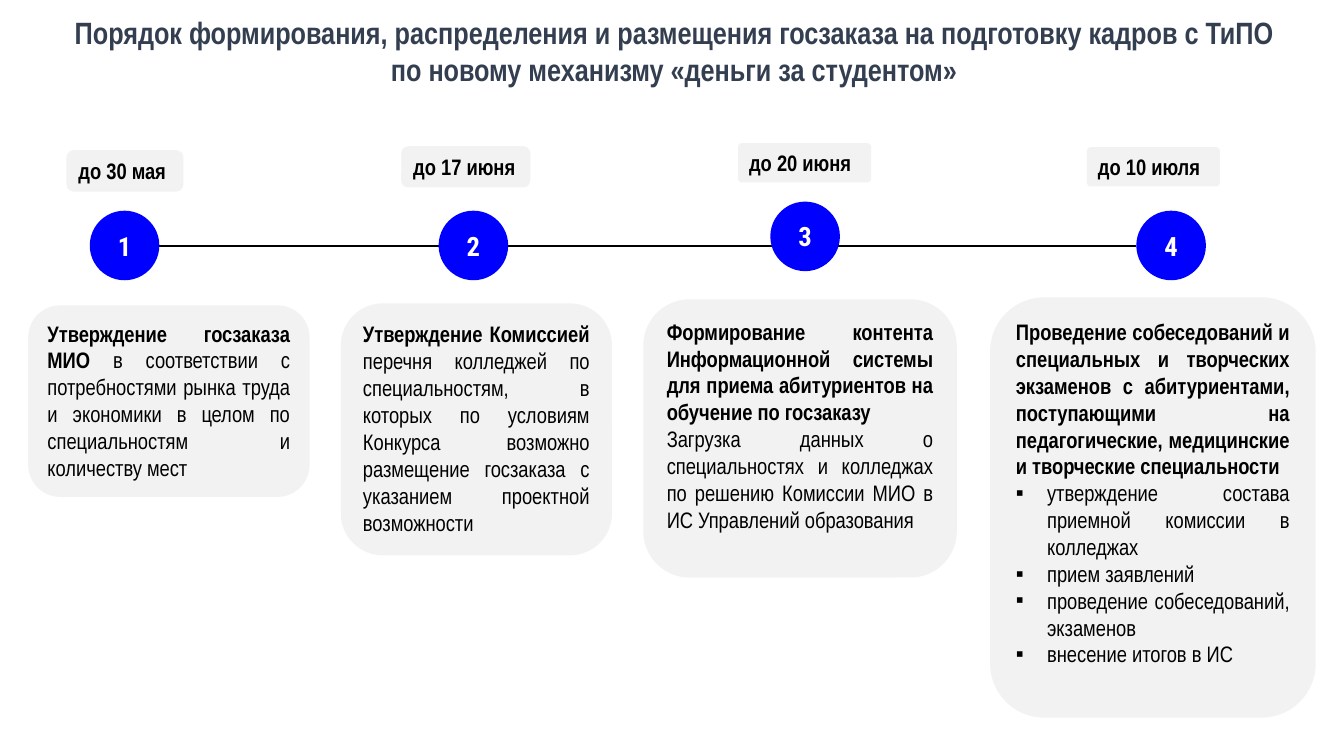
from lxml import etree
from pptx import Presentation
from pptx import util as u
from pptx.dml.color import RGBColor
from pptx.enum import shapes, text
from pptx.oxml import ns

NAVY = RGBColor(0x33, 0x3F, 0x50)
GRAY = RGBColor(0xF2, 0xF2, 0xF2)
BLUE = RGBColor(0x00, 0x00, 0xFF)
BLACK = RGBColor(0x00, 0x00, 0x00)
WHITE = RGBColor(0xFF, 0xFF, 0xFF)

NARROW = "Arial Narrow"
LEFT, CENTER, JUSTIFY = (text.PP_ALIGN.LEFT, text.PP_ALIGN.CENTER,
                         text.PP_ALIGN.JUSTIFY)
TOP, MIDDLE = text.MSO_ANCHOR.TOP, text.MSO_ANCHOR.MIDDLE
ROUNDED, OVAL = (shapes.MSO_SHAPE.ROUNDED_RECTANGLE, shapes.MSO_SHAPE.OVAL)

TITLE_FORMAT = {"size": u.Pt(22), "name": NARROW, "bold": True}
BODY_FORMAT = {"size": u.Pt(16), "name": NARROW}
NUMBER_FORMAT = {"size": u.Pt(19), "name": "Roboto Condensed", "bold": True}

CIRCLE_SIZE = 0.69
LINE_Y = 2.44

TITLE = [
    "Порядок формирования, распределения и размещения госзаказа на подготовку кадров с ТиПО",
    "по новому механизму «деньги за студентом»",
]

# Each stage: date label, label place and corner, circle place, card place,
# card paragraphs as (bold part, regular part), bullets
STAGES = [
    ("до 30 мая", (0.66, 1.49, 1.16, 0.41), 0.17, (0.89, 2.09),
     (0.28, 3.03, 2.79, 1.9),
     [("Утверждение госзаказа МИО ",
       "в соответствии с потребностями рынка труда и экономики в целом "
       "по специальностям и количеству мест")], []),
    ("до 17 июня", (3.98, 1.45, 1.28, 0.41), 0.17, (4.35, 2.09),
     (3.38, 3.01, 2.69, 2.5),
     [("Утверждение Комиссией ",
       "перечня колледжей по специальностям, в которых по условиям Конкурса "
       "возможно размещение госзаказа с указанием проектной возможности")], []),
    ("до 20 июня", (7.32, 1.42, 1.32, 0.39), 0.1, (7.64, 2),
     (6.38, 2.97, 3.11, 2.76),
     [("Формирование контента Информационной системы для приема абитуриентов "
       "на обучение по госзаказу", ""),
      ("", "Загрузка данных о специальностях и колледжах по решению Комиссии "
       "МИО в ИС Управлений образования")], []),
    ("до 10 июля", (10.78, 1.46, 1.32, 0.39), 0.1, (11.27, 2.09),
     (9.82, 2.95, 3.23, 4.17),
     [("Проведение собеседований и специальных и творческих экзаменов с "
       "абитуриентами, поступающими на педагогические, медицинские и "
       "творческие специальности", "")],
     ["утверждение состава приемной комиссии в колледжах",
      "прием заявлений",
      "проведение собеседований, экзаменов",
      "внесение итогов в ИС"]),
]


def add_span(para, words, color, formats):
    span = para.add_run()
    span.text = words
    for key, value in formats.items():
        setattr(span.font, key, value)
    span.font.color.rgb = color


def next_para(frame, align):
    first = frame.paragraphs[0]
    para = frame.add_paragraph() if first.runs else first
    para.alignment = align
    return para


def add_bullet(para):
    props = para._p.get_or_add_pPr()
    indent = u.Inches(0.31)
    props.set("marL", str(indent))
    props.set("indent", str(-indent))
    etree.SubElement(props, ns.qn("a:buFont"), typeface="Arial")
    etree.SubElement(props, ns.qn("a:buChar"), char="▪")


def add_box(page, kind, place, fill, anchor):
    box = page.shapes.add_shape(kind, *map(u.Inches, place))
    box.shadow.inherit = False
    box.fill.solid()
    box.fill.fore_color.rgb = fill
    box.line.fill.background()
    box.text_frame.word_wrap = True
    box.text_frame.vertical_anchor = anchor
    return box


def add_title(page):
    title = page.shapes.title
    title.left, title.top, title.width, title.height = map(
        u.Inches, (0.18, 0.14, 13.01, 0.73))
    frame = title.text_frame
    frame.word_wrap = True
    frame.auto_size = text.MSO_AUTO_SIZE.NONE
    frame.vertical_anchor = MIDDLE
    for words in TITLE:
        add_span(next_para(frame, CENTER), words, NAVY, TITLE_FORMAT)


def add_timeline(page, start, end):
    line = page.shapes.add_connector(
        shapes.MSO_CONNECTOR.STRAIGHT,
        *map(u.Inches, (start, LINE_Y, end, LINE_Y)))
    line.line.color.rgb = BLACK
    line.line.width = u.Pt(1.5)
    etree.SubElement(line._element.spPr, ns.qn("a:effectLst"))


def add_label(page, place, corner, words):
    label = add_box(page, ROUNDED, place, GRAY, TOP)
    label.adjustments[0] = corner
    add_span(next_para(label.text_frame, LEFT), words, BLACK,
             {**BODY_FORMAT, "bold": True})


def add_circle(page, place, number):
    circle = add_box(page, OVAL, (*place, CIRCLE_SIZE, CIRCLE_SIZE), BLUE, MIDDLE)
    frame = circle.text_frame
    for side in ("left", "top", "right", "bottom"):
        setattr(frame, f"margin_{side}", u.Inches(0.13))
    add_span(next_para(frame, CENTER), str(number), WHITE, NUMBER_FORMAT)


def add_card(page, place, paragraphs, bullets):
    frame = add_box(page, ROUNDED, place, GRAY, TOP).text_frame
    for parts in paragraphs:
        para = next_para(frame, JUSTIFY)
        for words, bold in zip(parts, (True, False)):
            if words:
                add_span(para, words, BLACK, {**BODY_FORMAT, "bold": bold})
    for words in bullets:
        para = next_para(frame, JUSTIFY)
        add_bullet(para)
        add_span(para, words, BLACK, {**BODY_FORMAT, "bold": False})


def main():
    deck = Presentation()
    deck.slide_width, deck.slide_height = u.Inches(13.33), u.Inches(7.5)
    page = deck.slides.add_slide(deck.slide_layouts[5])

    add_title(page)

    # Timeline from the first circle to the last, behind the circles
    add_timeline(page, STAGES[0][3][0] + CIRCLE_SIZE, STAGES[-1][3][0])

    # Stages: date, number and description
    for number, stage in enumerate(STAGES, 1):
        date, label_at, corner, circle_at, card_at, paragraphs, bullets = stage
        add_label(page, label_at, corner, date)
        add_circle(page, circle_at, number)
        add_card(page, card_at, paragraphs, bullets)

    deck.save("out.pptx")


if __name__ == "__main__":
    main()
